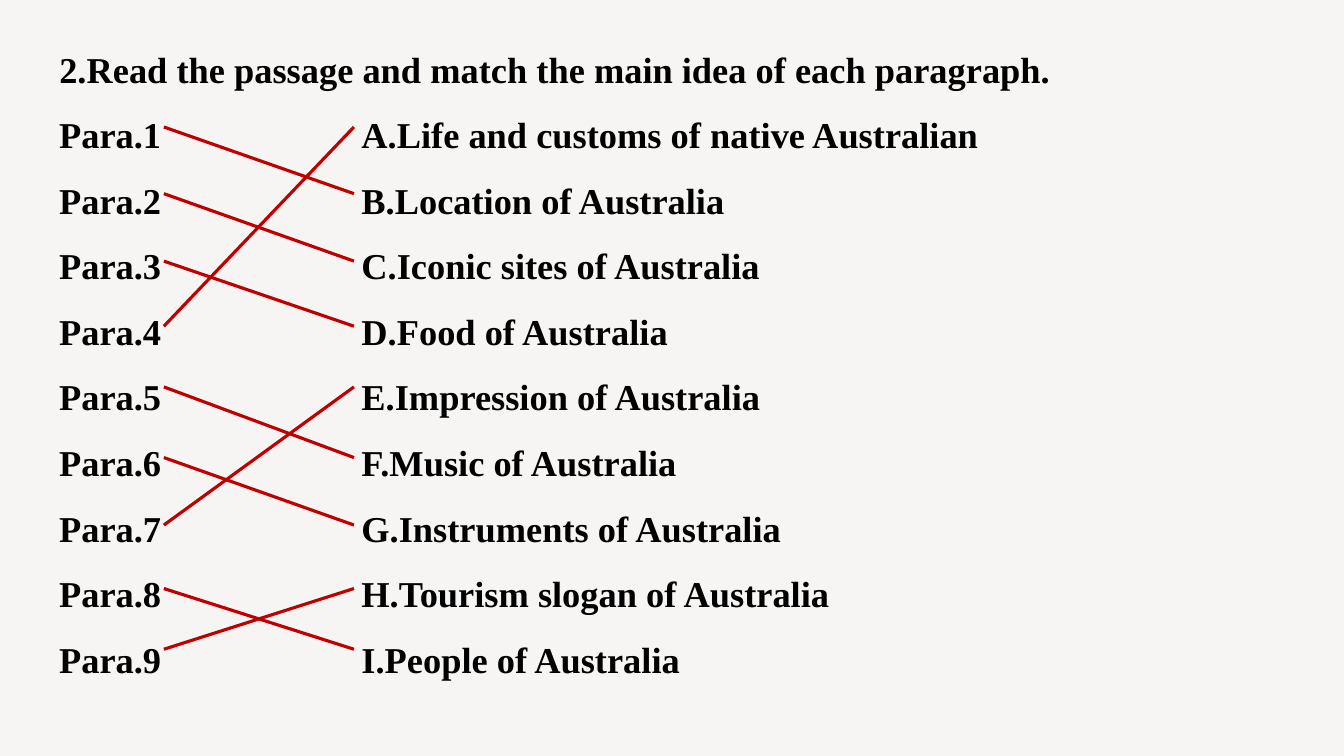
from lxml import etree
from pptx import Presentation
from pptx.dml.color import RGBColor
from pptx.enum.shapes import MSO_CONNECTOR
from pptx.enum.text import MSO_ANCHOR, MSO_AUTO_SIZE, PP_ALIGN
from pptx.oxml.ns import qn
from pptx.util import Cm, Pt

STRAIGHT = MSO_CONNECTOR.STRAIGHT
TOP = MSO_ANCHOR.TOP
NO_AUTOFIT = MSO_AUTO_SIZE.NONE
JUSTIFY = PP_ALIGN.JUSTIFY

BACKGROUND = RGBColor(0xF7, 0xF5, 0xF3)
BLACK = RGBColor(0x00, 0x00, 0x00)
RED = RGBColor(0xC0, 0x00, 0x00)
FONT = "Times New Roman"

TITLE = "2.Read the passage and match the main idea of each paragraph."
IDEAS = [
    "A.Life and customs of native Australian",
    "B.Location of Australia",
    "C.Iconic sites of Australia",
    "D.Food of Australia",
    "E.Impression of Australia",
    "F.Music of Australia",
    "G.Instruments of Australia",
    "H.Tourism slogan of Australia",
    "I.People of Australia",
]
ANSWERS = "BCDAFGEIH"  # matching idea for Para.1 to Para.9

# Lengths in centimetres
TEXT_LEFT, TEXT_TOP, TEXT_WIDTH = 1.24, 0.51, 31.37
ROW_HEIGHT = 1.65
IDEA_TAB = 7.62
LINE_START, LINE_END = 4.13, 8.92
LINE_ROWS = [3.2, 4.88, 6.58, 8.22, 9.75, 11.53, 13.23, 14.83, 16.36]


def format_text(shape):
    frame = shape.text_frame
    frame.word_wrap = True
    frame.auto_size = NO_AUTOFIT
    frame.vertical_anchor = TOP
    for paragraph in frame.paragraphs:
        paragraph.alignment = JUSTIFY
        paragraph.line_spacing = Pt(46.8)
        for run in paragraph.runs:
            run.font.name = FONT
            run.font.size = Pt(26)
            run.font.bold = True
            run.font.color.rgb = BLACK


def add_tab_stop(paragraph, position):
    tabs = etree.SubElement(paragraph._p.get_or_add_pPr(), qn("a:tabLst"))
    etree.SubElement(tabs, qn("a:tab"), pos=str(int(position)), algn="l")


def add_title(slide):
    title = slide.shapes.title
    title.left, title.top = Cm(TEXT_LEFT), Cm(TEXT_TOP)
    title.width, title.height = Cm(TEXT_WIDTH), Cm(ROW_HEIGHT)
    title.text_frame.text = TITLE
    format_text(title)


def add_matching_list(slide):
    box = slide.shapes.add_textbox(
        Cm(TEXT_LEFT), Cm(TEXT_TOP + ROW_HEIGHT),
        Cm(TEXT_WIDTH), Cm(ROW_HEIGHT * len(IDEAS) + 0.25))
    rows = [f"Para.{number}\t{idea}" for number, idea in enumerate(IDEAS, 1)]
    box.text_frame.text = "\n".join(rows)
    for paragraph in box.text_frame.paragraphs:
        add_tab_stop(paragraph, Cm(IDEA_TAB))
    format_text(box)


def add_answer_lines(slide):
    letters = [idea[0] for idea in IDEAS]
    for start_y, answer in zip(LINE_ROWS, ANSWERS):
        end_y = LINE_ROWS[letters.index(answer)]
        line = slide.shapes.add_connector(
            STRAIGHT, Cm(LINE_START), Cm(start_y), Cm(LINE_END), Cm(end_y))
        line.line.color.rgb = RED
        line.line.width = Pt(2.25)
        etree.SubElement(line._element.spPr, qn("a:effectLst"))


def main():
    presentation = Presentation()
    presentation.slide_width = Cm(33.87)
    presentation.slide_height = Cm(19.05)
    slide = presentation.slides.add_slide(presentation.slide_layouts[5])
    slide.background.fill.solid()
    slide.background.fill.fore_color.rgb = BACKGROUND
    add_title(slide)
    add_matching_list(slide)
    add_answer_lines(slide)
    presentation.save("out.pptx")


if __name__ == "__main__":
    main()
